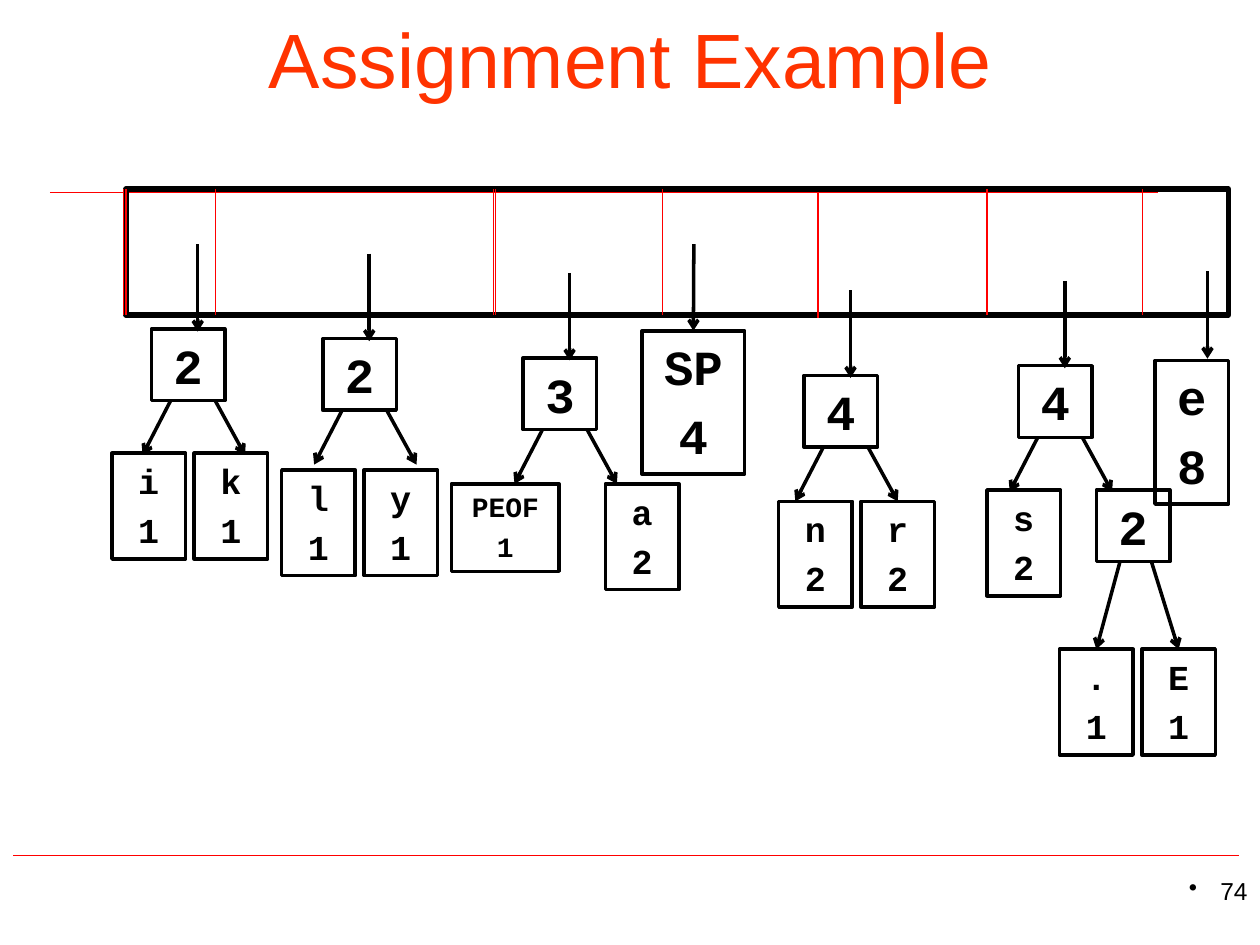
"""Build the Assignment Example slide: an array of slots pointing to small trees."""
from lxml import etree
from pptx import Presentation
from pptx import util as u
from pptx.dml.color import RGBColor
from pptx.enum import shapes, text
from pptx.oxml import ns

BLACK, RED, ORANGE = "000000", "FF0000", "FF3300"
ROOT_W, ROOT_H, LEAF_H, LEAF_STEP = 42, 41, 60.5, 47
SLOT_TOP, SLOT_BOTTOM = 108, 180


def paint(color_format, value):
    """Set a colour format from a hex string."""
    color_format.rgb = RGBColor.from_string(value)


def apply(target, values):
    """Set each attribute in values on target."""
    for name, value in values.items():
        setattr(target, name, value)


def write(paragraph, words, color, align, **font):
    """Fill a paragraph with one formatted run."""
    run = paragraph.add_run()
    run.text = words
    paragraph.alignment = align
    apply(run.font, font)
    paint(run.font.color, color)


def frame(slide, left, top, width, height, weight=2):
    """Add an unfilled black rectangle."""
    outline = slide.shapes.add_shape(
        shapes.MSO_SHAPE.RECTANGLE, *map(u.Pt, (left, top, width, height)))
    outline.shadow.inherit = False
    outline.fill.background()
    outline.line.width = u.Pt(weight)
    paint(outline.line.color, BLACK)
    return outline


def node(slide, lines, left, top, width=ROOT_W, height=ROOT_H, size=28):
    """Add a tree node with one centred paragraph per line."""
    box = frame(slide, left, top, width, height)
    words = box.text_frame
    apply(words, {"word_wrap": True, "vertical_anchor": text.MSO_ANCHOR.TOP})
    for i, line in enumerate(lines):
        paragraph = words.add_paragraph() if i else words.paragraphs[0]
        paragraph.space_before = u.Pt(0.2 * size)
        write(paragraph, line, BLACK, text.PP_ALIGN.CENTER,
              name="Courier New", size=u.Pt(size), bold=True)
    return box


def leaf(slide, symbol, count, left, top):
    """Add a leaf with its symbol above its count."""
    return node(slide, (symbol, count), left, top, height=LEAF_H, size=20)


def rule(slide, start, end, color=RED, weight=0.75):
    """Add a straight line."""
    line = slide.shapes.add_connector(
        shapes.MSO_CONNECTOR.STRAIGHT, *map(u.Pt, (*start, *end)))
    line.line.width = u.Pt(weight)
    paint(line.line.color, color)
    etree.SubElement(line.element.spPr, ns.qn("a:effectLst"))
    return line


def arrow(slide, start, end, target=None):
    """Add a black arrow, joined to the top of target if given."""
    pointer = rule(slide, start, end, BLACK, 2)
    outline = pointer.element.spPr.find(ns.qn("a:ln"))
    etree.SubElement(outline, ns.qn("a:tailEnd"), type="arrow")
    if target is not None:
        pointer.end_connect(target, 0)


def tree(slide, count, left, top):
    """Add a root with the stem from its slot and two branches."""
    bottom = top + ROOT_H
    arrow(slide, (left + 26.5, top - 48.5), (left + 26.5, top + 1.5))
    for start, end in ((11, -5), (36.5, 53.5)):
        arrow(slide, (left + start, bottom), (left + end, bottom + 31))
    node(slide, (count,), left, top)


def heading(slide):
    """Fill the title placeholder."""
    title = slide.shapes.title
    apply(title, {"left": u.Pt(54.5), "top": u.Pt(-12),
                  "width": u.Pt(612), "height": u.Pt(90)})
    title.text_frame.vertical_anchor = text.MSO_ANCHOR.MIDDLE
    write(title.text_frame.paragraphs[0], "Assignment Example", ORANGE,
          text.PP_ALIGN.CENTER, name="Arial", size=u.Pt(44))


def page_number(slide):
    """Add the bulleted page number."""
    corner = slide.shapes.add_textbox(*map(u.Pt, (552, 497, 168, 37.5)))
    corner.text_frame.word_wrap = True
    paragraph = corner.text_frame.paragraphs[0]
    write(paragraph, "74", BLACK, text.PP_ALIGN.RIGHT, name="Arial", size=u.Pt(14))
    layout = paragraph._p.get_or_add_pPr()
    layout.set("marL", str(u.Pt(18)))
    layout.set("indent", str(-u.Pt(18)))
    etree.SubElement(layout, ns.qn("a:buChar"), char="•")


def slots(slide):
    """Add the array frame and its dividers."""
    frame(slide, 72, SLOT_TOP, 630, SLOT_BOTTOM - SLOT_TOP, 3)
    for x in (70.5, 72, 123, 282, 283, 378.5, 564, 653):
        rule(slide, (x, SLOT_TOP), (x, SLOT_BOTTOM))
    rule(slide, (467.5, 110), (467.5, 182))


def main():
    """Build and save the slide."""
    deck = Presentation()
    apply(deck, {"slide_width": u.Pt(720), "slide_height": u.Pt(540)})
    slide = deck.slides.add_slide(deck.slide_layouts[5])
    rule(slide, (28.5, 110), (661.5, 110))
    rule(slide, (7.5, 489), (708, 489))
    heading(slide)
    page_number(slide)
    slots(slide)

    for count, left, top in (("2", 86.5, 188), ("2", 184.5, 193.5), ("3", 299, 204.5),
                             ("4", 459.5, 214.5), ("4", 582, 209)):
        tree(slide, count, left, top)
    for symbols, count, left, top in (("ik", "1", 64, 259), ("ly", "1", 161, 268.5),
                                      ("nr", "2", 445, 286.5)):
        for i, symbol in enumerate(symbols):
            leaf(slide, symbol, count, left + i * LEAF_STEP, top)
    node(slide, ("PEOF", "1"), 258, 276.5, 61.5, 50, 16)
    leaf(slide, "a", "2", 346, 276.5)
    leaf(slide, "s", "2", 564, 280)

    node(slide, ("2",), 626.5, 280)
    for symbol, left, start in ((".", 605.5, 640), ("E", 652.5, 658)):
        child = leaf(slide, symbol, "1", left, 371)
        arrow(slide, (start, 321), (left + ROOT_W / 2, 371), child)

    space = node(slide, ("SP", "4"), 367, 189, 58.5, 82)
    arrow(slide, (396.5, 139.5), (396.5, 189), space)
    node(slide, ("e", "8"), 660, 206, height=82)
    arrow(slide, (690, 155), (690, 205))
    deck.save("out.pptx")


if __name__ == "__main__":
    main()
